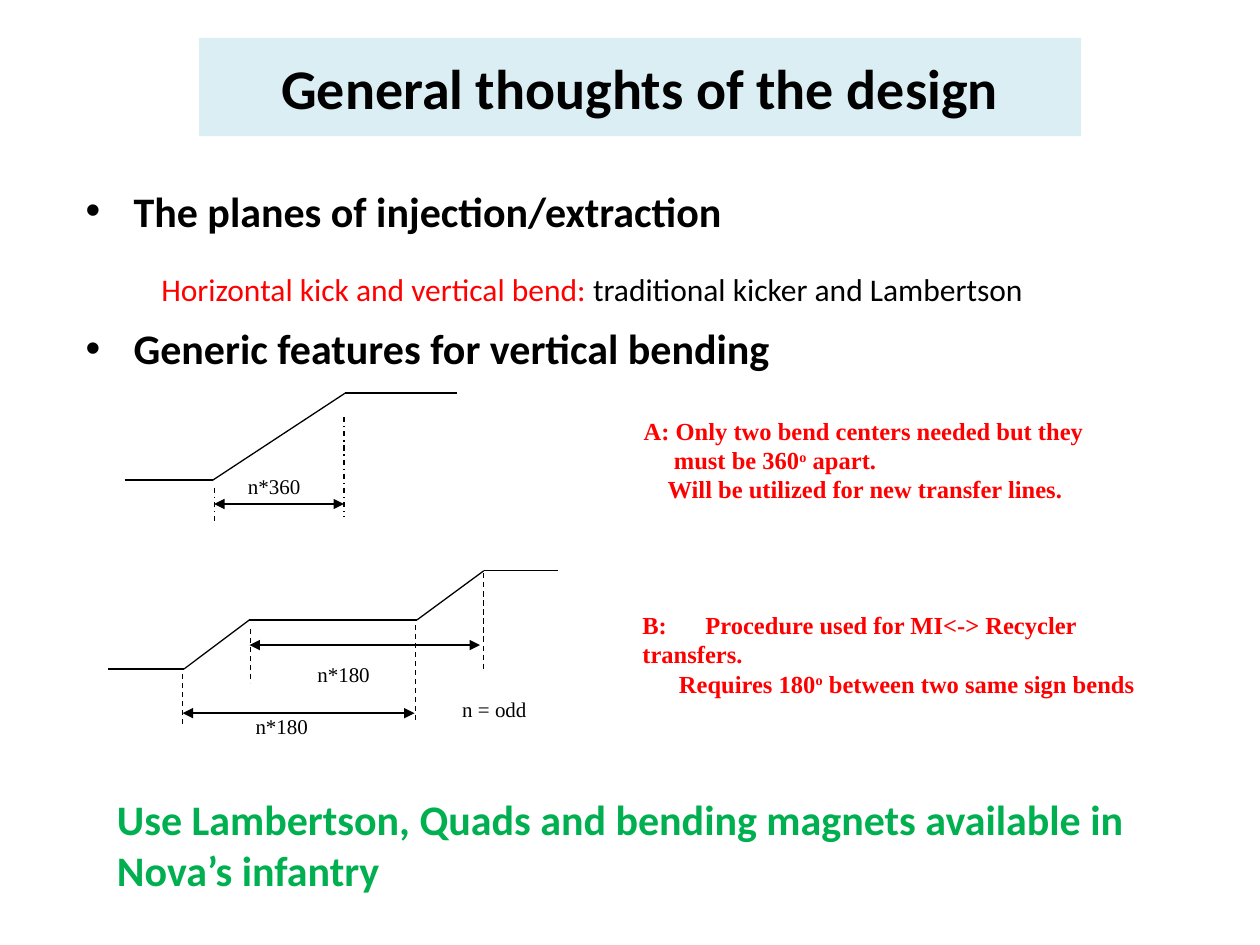
from lxml import etree
from pptx import Presentation
from pptx.dml.color import RGBColor
from pptx.enum.dml import MSO_LINE
from pptx.enum.shapes import MSO_CONNECTOR, MSO_SHAPE
from pptx.enum.text import MSO_ANCHOR, MSO_AUTO_SIZE, PP_ALIGN
from pptx.oxml.ns import qn
from pptx.util import Inches, Pt

STRAIGHT = MSO_CONNECTOR.STRAIGHT
RECTANGLE = MSO_SHAPE.RECTANGLE
DASH, DASH_DOT = MSO_LINE.DASH, MSO_LINE.DASH_DOT
CENTER, LEFT = PP_ALIGN.CENTER, PP_ALIGN.LEFT
MIDDLE, TOP = MSO_ANCHOR.MIDDLE, MSO_ANCHOR.TOP
NO_AUTOFIT = MSO_AUTO_SIZE.NONE

# The slide is a grid of 100 columns by 75 rows
COLUMNS, ROWS = 100, 75
SLIDE_WIDTH, SLIDE_HEIGHT = Inches(10), Inches(7.5)

COLORS = {
    "black": "000000",
    "red": "FF0000",
    "green": "00B050",
    "white": "FFFFFF",
    "band": "DBEEF4",
}
FORMATS = {
    "title": {"name": "Calibri", "size": Pt(32), "bold": True},
    "heading": {"name": "Calibri", "size": Pt(24), "bold": True},
    "detail": {"name": "Calibri", "size": Pt(18), "bold": False},
    "note": {"name": "Times New Roman", "size": Pt(14), "bold": True},
    "label": {"name": "Times New Roman", "size": Pt(12), "bold": False},
}


class SlideBuilder:
    """Holds the style and the current slide."""

    def __init__(self, presentation):
        self.slide = presentation.slides.add_slide(presentation.slide_layouts[1])
        self.shapes = self.slide.shapes

    def start_group(self):
        self.shapes = self.slide.shapes.add_group_shape().shapes

    def end_group(self):
        self.shapes = self.slide.shapes

    def x(self, column):
        return round(SLIDE_WIDTH * column / COLUMNS)

    def y(self, row):
        return round(SLIDE_HEIGHT * row / ROWS)

    def box(self, column, row, width, height):
        return self.x(column), self.y(row), self.x(width), self.y(height)

    def place(self, shape, *cells):
        for name, value in zip(("left", "top", "width", "height"), self.box(*cells)):
            setattr(shape, name, value)

    def fill(self, shape, color):
        shape.fill.solid()
        shape.fill.fore_color.rgb = RGBColor.from_string(COLORS[color])

    def frame(self, shape, wrap=True, anchor=TOP):
        frame = shape.text_frame
        settings = {"auto_size": NO_AUTOFIT, "word_wrap": wrap, "vertical_anchor": anchor}
        for name, value in settings.items():
            setattr(frame, name, value)
        return frame

    def run(self, paragraph, text, style, color, raised=False):
        run = paragraph.add_run()
        run.text = text
        for name, value in FORMATS[style].items():
            setattr(run.font, name, value)
        run.font.color.rgb = RGBColor.from_string(COLORS[color])
        if raised:
            run.font._element.set("baseline", "30000")

    def indent(self, paragraph, left, first=0):
        properties = paragraph._p.get_or_add_pPr()
        properties.set("marL", str(self.x(left)))
        properties.set("indent", str(self.x(first)))
        return properties

    def title(self, text, *cells):
        shape = self.slide.shapes.title
        self.place(shape, *cells)
        self.fill(shape, "band")
        paragraph = self.frame(shape, anchor=MIDDLE).paragraphs[0]
        paragraph.alignment = CENTER
        self.run(paragraph, text, "title", "black")

    def body(self, items, *cells):
        """Each item is (bulleted, space before in points, runs)."""
        shape = self.slide.placeholders[1]
        self.place(shape, *cells)
        frame = self.frame(shape)
        for index, (bulleted, space, runs) in enumerate(items):
            paragraph = frame.add_paragraph() if index else frame.paragraphs[0]
            paragraph.space_before = Pt(space)
            if bulleted:
                self.indent(paragraph, 3.8, -3.8)
            else:
                etree.SubElement(self.indent(paragraph, 6), qn("a:buNone"))
            for run in runs:
                self.run(paragraph, *run)

    def note(self, lines, style, color, *cells, tab=None):
        """Each line is (indent, text parts); every second part is raised."""
        frame = self.frame(self.shapes.add_textbox(*self.box(*cells)))
        for index, (left, parts) in enumerate(lines):
            paragraph = frame.add_paragraph() if index else frame.paragraphs[0]
            properties = self.indent(paragraph, left)
            if tab:
                stops = etree.SubElement(properties, qn("a:tabLst"))
                etree.SubElement(stops, qn("a:tab"), pos=str(self.x(tab)), algn="l")
            for number, part in enumerate(parts):
                self.run(paragraph, part, style, color, raised=number % 2 == 1)

    def label(self, text, *cells, fill=None):
        if fill:
            shape = self.shapes.add_shape(RECTANGLE, *self.box(*cells))
            shape.shadow.inherit = False
            self.fill(shape, fill)
            shape.line.fill.background()
        else:
            shape = self.shapes.add_textbox(*self.box(*cells))
        paragraph = self.frame(shape, wrap=False).paragraphs[0]
        paragraph.alignment = LEFT
        self.run(paragraph, text, "label", "black")

    def line(self, start, end, dash=None, arrows=False):
        connector = self.shapes.add_connector(
            STRAIGHT, self.x(start[0]), self.y(start[1]), self.x(end[0]), self.y(end[1]))
        connector.line.color.rgb = RGBColor.from_string(COLORS["black"])
        connector.line.width = Pt(0.75)
        if dash:
            connector.line.dash_style = dash
        if arrows:
            outline = connector.line._get_or_add_ln()
            for tag in ("a:headEnd", "a:tailEnd"):
                etree.SubElement(outline, qn(tag), type="triangle")
        etree.SubElement(connector._element.spPr, qn("a:effectLst"))

    def beamline(self, points):
        for start, end in zip(points, points[1:]):
            self.line(start, end)

    def verticals(self, marks, dash):
        for column, top, bottom in marks:
            self.line((column, top), (column, bottom), dash)

    def span(self, left, right, row):
        self.line((left, row), (right, row), arrows=True)


def main():
    presentation = Presentation()
    presentation.slide_width, presentation.slide_height = SLIDE_WIDTH, SLIDE_HEIGHT
    builder = SlideBuilder(presentation)

    # Title and list
    builder.title("General thoughts of the design", 15.8, 3, 70, 7.8)
    builder.body([
        (True, 4.8, [("The planes of injection/extraction", "heading", "black")]),
        (False, 19.5, [("Horizontal kick and vertical bend: ", "detail", "red"),
                       ("traditional kicker and Lambertson", "detail", "black")]),
        (True, 8.8, [("Generic features for vertical bending", "heading", "black")]),
    ], 5.8, 14.2, 90, 49.5)

    # Diagram A: two bend centers
    builder.start_group()
    builder.beamline([(9.9, 38.1), (16.9, 38.1), (27.4, 31.2), (36.3, 31.2)])
    builder.verticals([(17, 38.7, 41.5), (27.3, 33.1, 41)], DASH_DOT)
    builder.span(17, 27.3, 40)
    builder.label("n*360", 18.7, 37.1, 7, 2.5)
    builder.end_group()

    # Notes on the two procedures
    builder.note([
        (0, ["B:\tProcedure used for MI<-> Recycler transfers."]),
        (2.9, ["Requires 180", "o", " between two same sign bends"]),
    ], "note", "red", 50, 47.9, 42.5, 7.5, tab=2.9)
    builder.note([
        (0, ["A: Only two bend centers needed but they"]),
        (2.4, ["must be 360", "o", " apart."]),
        (1.9, ["Will be utilized for new transfer lines."]),
    ], "note", "red", 50.1, 32.5, 40, 8.3)

    # Diagram B: four bend centers
    builder.start_group()
    builder.beamline([(8.6, 53.1), (14.6, 53.1), (19.8, 49.2), (33.1, 49.2),
                      (38.4, 45.3), (44.3, 45.3)])
    builder.verticals([(14.5, 53.5, 57.7), (19.9, 49.9, 54.2),
                       (38.4, 45.5, 53.1), (33, 49.6, 57.3)], DASH)
    builder.span(14.5, 32.9, 56.6)
    builder.span(19.8, 38.1, 51.2)
    builder.label("n*180", 19.3, 56.1, 7, 2.5)
    builder.label("n*180", 24.2, 52, 7.1, 2.5)
    builder.label("n = odd", 35.7, 54.8, 7.9, 2.7, fill="white")
    builder.end_group()

    # Conclusion
    builder.note([
        (0, ["Use Lambertson, Quads and bending magnets available in Nova’s infantry"]),
    ], "heading", "green", 8.3, 62.5, 84.2, 9.1)

    presentation.save("out.pptx")


if __name__ == "__main__":
    main()
